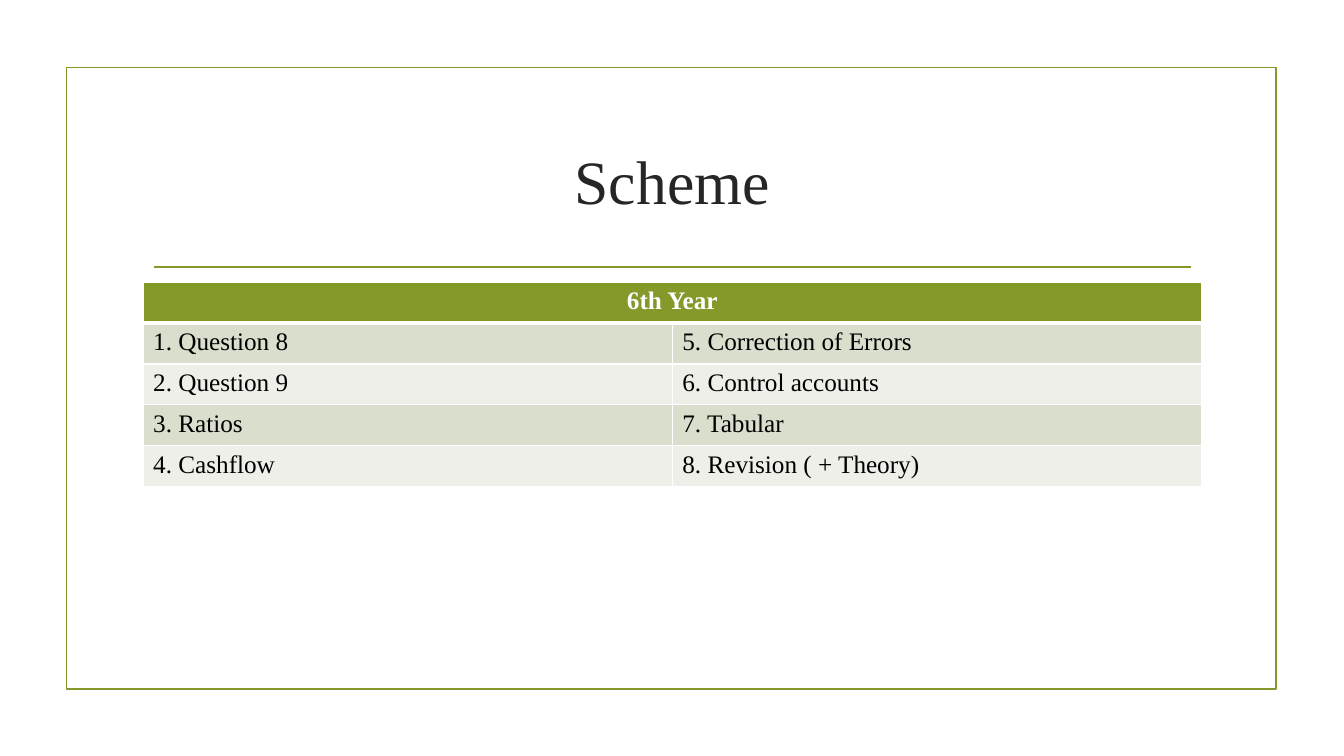
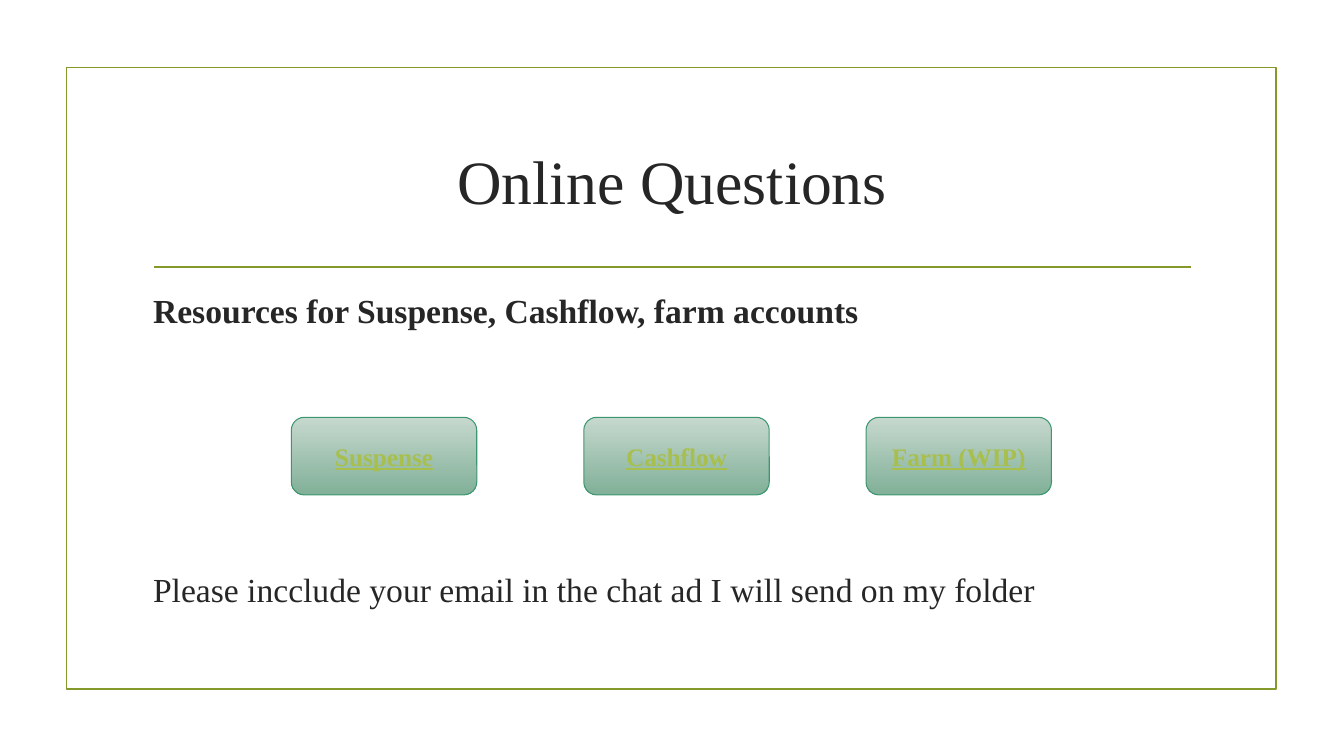
from lxml import etree
from pptx import Presentation
from pptx import util as u
from pptx.dml.color import RGBColor
from pptx.enum import shapes, text
from pptx.oxml import ns

WIDTH, HEIGHT = u.Inches(13.33), u.Inches(7.5)
FONT = "Times New Roman"
GREEN, INK, WHITE, BLACK = "83992A", "262626", "FFFFFF", "000000"
BANDS = ("D9DECD", "EDEFE8")
LINK, BUTTON_EDGE, BUTTON_FADE = "A8BF4D", "3C9770", ("C6D8CE", "81B098")

# All lengths are percentages of the slide's width or height.
LEFT, SPAN = 10.65, 78.75
BODY_TOP, ROW = 37.33, 5.41

TITLE = {"size": u.Pt(44)}
LEAD = {"size": u.Pt(24), "bold": True}
BODY = {"size": u.Pt(24), "bold": False}
HEADER = {"size": u.Pt(18), "bold": True}
CELL = {"size": u.Pt(18), "bold": False}
BUTTON = {"size": u.Pt(18), "bold": True, "underline": True}


def rgb(value):
    return RGBColor.from_string(value)


def place(x, y, w, h):
    """Turn percentages of the slide into lengths."""
    return (int(WIDTH * x / 100), int(HEIGHT * y / 100),
            int(WIDTH * w / 100), int(HEIGHT * h / 100))


def write(paragraph, words, style, color, align=text.PP_ALIGN.LEFT):
    paragraph.alignment = align
    run = paragraph.add_run()
    run.text = words
    run.font.name = FONT
    run.font.color.rgb = rgb(color)
    for attribute, value in style.items():
        setattr(run.font, attribute, value)


def add_text_area(slide, area):
    frame = slide.shapes.add_textbox(*place(*area)).text_frame
    frame.word_wrap = True
    return frame


def add_page(deck, heading):
    """Add a slide with the shared border, rule and title."""
    slide = deck.slides.add_slide(deck.slide_layouts[6])
    border = slide.shapes.add_shape(
        shapes.MSO_SHAPE.RECTANGLE, *place(4.95, 8.93, 90, 82.27))
    border.shadow.inherit = False
    border.fill.background()
    x, y, right, _ = place(11.48, 35.33, 88.6, 0)
    rule = slide.shapes.add_connector(
        shapes.MSO_CONNECTOR.STRAIGHT, x, y, right, y)
    etree.SubElement(rule._element.spPr, ns.qn("a:effectLst"))
    for outlined in (border, rule):
        outlined.line.color.rgb = rgb(GREEN)
        outlined.line.width = u.Pt(1.25)
    title = add_text_area(slide, (LEFT, 14.27, SPAN, 19.07))
    title.vertical_anchor = text.MSO_ANCHOR.MIDDLE
    write(title.paragraphs[0], heading, TITLE, INK, text.PP_ALIGN.CENTER)
    return slide


def set_borders(cell, **widths):
    """Draw white cell borders, 1 pt unless a side is given its own width."""
    properties = cell._tc.get_or_add_tcPr()
    for side in "LRTB":
        line = etree.SubElement(properties, ns.qn(f"a:ln{side}"),
                                w=str(u.Pt(widths.get(side, 1))))
        fill = etree.SubElement(line, ns.qn("a:solidFill"))
        etree.SubElement(fill, ns.qn("a:srgbClr"), val=WHITE)


def add_scheme(slide, heading, topics):
    count = len(topics) + 1
    scheme = slide.shapes.add_table(
        count, 2, *place(LEFT, BODY_TOP, SPAN, ROW * count)).table
    scheme.cell(0, 0).merge(scheme.cell(0, 1))
    for column in (0, 1):
        header = scheme.cell(0, column)
        set_borders(header, B=3)
        header.fill.solid()
        header.fill.fore_color.rgb = rgb(GREEN)
    write(scheme.cell(0, 0).text_frame.paragraphs[0], heading, HEADER, WHITE,
          text.PP_ALIGN.CENTER)
    for row, pair in enumerate(topics, 1):
        for column, topic in enumerate(pair):
            cell = scheme.cell(row, column)
            set_borders(cell, T=3 if row == 1 else 1)
            cell.fill.solid()
            cell.fill.fore_color.rgb = rgb(BANDS[(row - 1) % 2])
            write(cell.text_frame.paragraphs[0], topic, CELL, BLACK)


def add_button(slide, x, label):
    button = slide.shapes.add_shape(
        shapes.MSO_SHAPE.ROUNDED_RECTANGLE, *place(x, 55.2, 13.8, 10.27))
    button.shadow.inherit = False
    button.fill.gradient()
    button.fill.gradient_angle = 270
    for stop, color in zip(button.fill.gradient_stops, BUTTON_FADE):
        stop.color.rgb = rgb(color)
    button.line.color.rgb = rgb(BUTTON_EDGE)
    button.line.width = u.Pt(0.75)
    button.text_frame.vertical_anchor = text.MSO_ANCHOR.MIDDLE
    write(button.text_frame.paragraphs[0], label, BUTTON, LINK,
          text.PP_ALIGN.CENTER)


def add_resources(slide, lead, request):
    """Write the lead line and, below the buttons, the request."""
    body = add_text_area(slide, (LEFT, BODY_TOP, SPAN, 48.4))
    body.margin_top = u.Inches(0.08)
    write(body.paragraphs[0], lead, LEAD, INK)
    closing = body.add_paragraph()
    closing.space_before = u.Pt(170)
    write(closing, request, BODY, INK)


def main():
    deck = Presentation()
    deck.slide_width, deck.slide_height = WIDTH, HEIGHT

    add_scheme(add_page(deck, "Scheme"), "6th Year", (
        ("1. Question 8", "5. Correction of Errors"),
        ("2. Question 9", "6. Control accounts"),
        ("3. Ratios", "7. Tabular"),
        ("4. Cashflow", "8. Revision ( + Theory)"),
    ))

    questions = add_page(deck, "Online Questions")
    add_resources(questions, "Resources for Suspense, Cashflow, farm accounts",
                  "Please incclude your email in the chat ad I will send on my folder")
    for x, label in ((21.68, "Suspense"), (43.44, "Cashflow"),
                     (64.44, "Farm (WIP)")):
        add_button(questions, x, label)

    deck.save("out.pptx")


if __name__ == "__main__":
    main()
